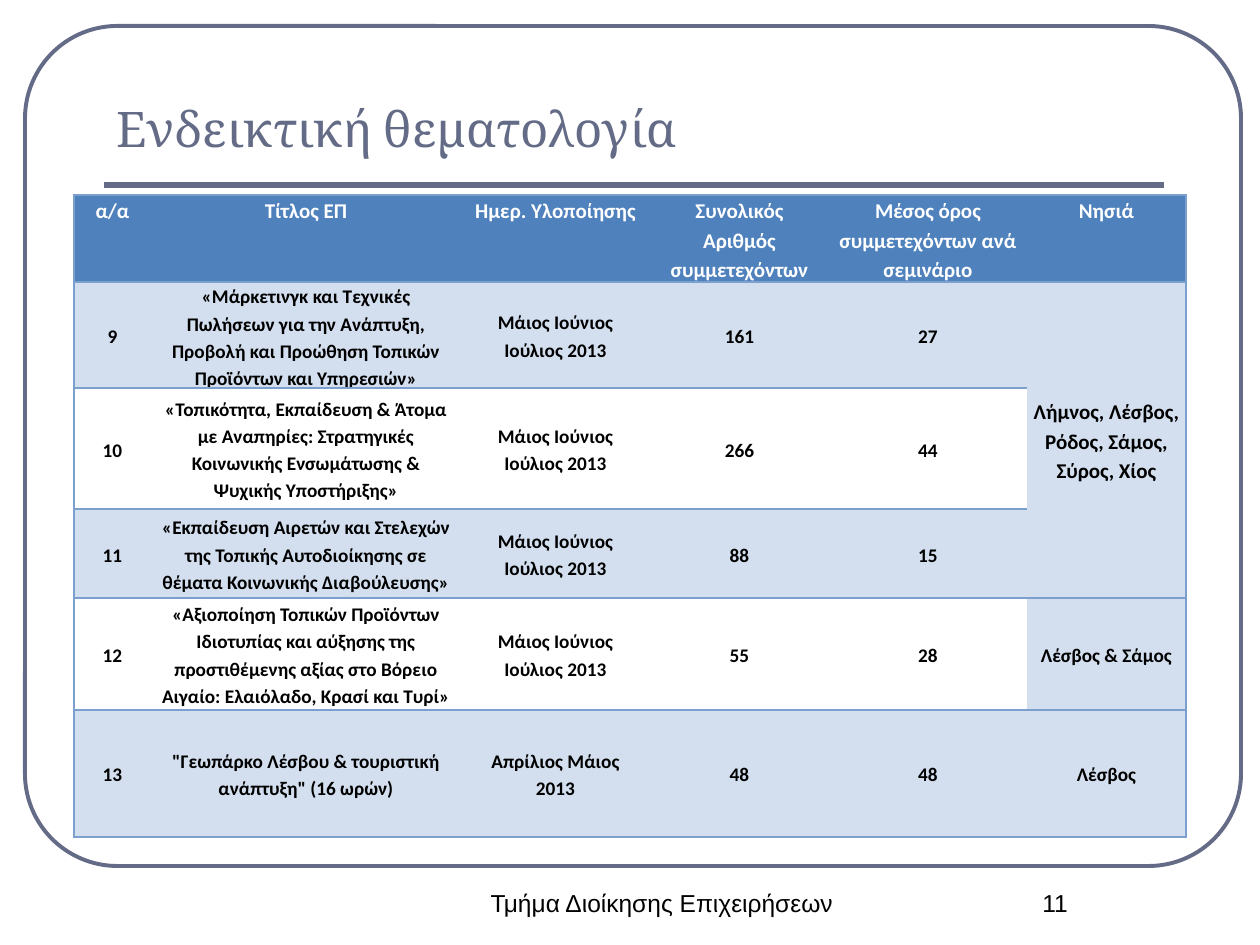
from dataclasses import dataclass

from lxml import etree
from pptx import Presentation
from pptx.dml.color import RGBColor
from pptx.enum.shapes import MSO_CONNECTOR, MSO_SHAPE
from pptx.enum.text import MSO_ANCHOR, PP_ALIGN
from pptx.oxml.ns import qn
from pptx.util import Pt

ROUND_RECT = MSO_SHAPE.ROUNDED_RECTANGLE
STRAIGHT = MSO_CONNECTOR.STRAIGHT
LEFT, CENTER = PP_ALIGN.LEFT, PP_ALIGN.CENTER
TOP, MIDDLE, BOTTOM = MSO_ANCHOR.TOP, MSO_ANCHOR.MIDDLE, MSO_ANCHOR.BOTTOM

TITLE = "Ενδεικτική θεματολογία"
DEPARTMENT = "Τμήμα Διοίκησης Επιχειρήσεων"
PAGE_NUMBER = "11"
SUMMER = "Μάιος Ιούνιος Ιούλιος 2013"
HEADER = [
    "α/α", "Τίτλος ΕΠ", "Ημερ. Υλοποίησης",
    "Συνολικός\nΑριθμός συμμετεχόντων",
    "Μέσος όρος\nσυμμετεχόντων ανά σεμινάριο", "Νησιά",
]
# None continues the cell above.
SEMINARS = [
    ("9", "«Μάρκετινγκ και Τεχνικές Πωλήσεων για την Ανάπτυξη, Προβολή και "
     "Προώθηση Τοπικών Προϊόντων και Υπηρεσιών»", SUMMER, "161", "27",
     "Λήμνος, Λέσβος, Ρόδος, Σάμος, Σύρος, Χίος"),
    ("10", "«Τοπικότητα, Εκπαίδευση & Άτομα με Αναπηρίες: Στρατηγικές "
     "Κοινωνικής Ενσωμάτωσης & Ψυχικής Υποστήριξης»", SUMMER, "266", "44", None),
    ("11", "«Εκπαίδευση Αιρετών και Στελεχών της Τοπικής Αυτοδιοίκησης σε "
     "θέματα Κοινωνικής Διαβούλευσης»", SUMMER, "88", "15", None),
    ("12", "«Αξιοποίηση Τοπικών Προϊόντων Ιδιοτυπίας και αύξησης της "
     "προστιθέμενης αξίας στο Βόρειο Αιγαίο: Ελαιόλαδο, Κρασί και Τυρί»",
     SUMMER, "55", "28", "Λέσβος & Σάμος"),
    ("13", "\"Γεωπάρκο Λέσβου & τουριστική ανάπτυξη\" (16 ωρών)",
     "Απρίλιος Μάιος 2013", "48", "48", "Λέσβος"),
]
COLUMNS = [77, 310, 189, 179, 198, 159]
ROWS = [83, 102, 121, 89, 112, 127]
TABLE_LEFT, TABLE_TOP = 74, 195
ISLANDS = len(HEADER) - 1


@dataclass(frozen=True)
class Theme:
    slate: str = "646B86"
    header: str = "4F81BD"
    band: str = "D3DFEE"
    rule: str = "7BA0CD"
    white: str = "FFFFFF"
    black: str = "000000"
    title_font: str = "Cambria"
    table_font: str = "Calibri"
    footer_font: str = "Arial"
    title_size: int = 28
    footer_size: int = 14
    large_size: int = 12
    body_size: int = 11


THEME = Theme()


def px(length):
    return round(length * 914400 / 126)


def rgb(value):
    return RGBColor.from_string(value)


def style_text(frame, font, size, color, align, bold=False, spacing=None):
    for paragraph in frame.paragraphs:
        paragraph.alignment = align
        paragraph.line_spacing = spacing
        for run in paragraph.runs:
            run.font.name = font
            run.font.size = Pt(size)
            run.font.bold = bold
            run.font.color.rgb = rgb(color)


def add_label(slide, text, box, font, size, color, align, anchor):
    frame = slide.shapes.add_textbox(*map(px, box)).text_frame
    frame.word_wrap = True
    frame.vertical_anchor = anchor
    frame.text = text
    style_text(frame, font, size, color, align)


def add_frame(slide):
    """Draw the rounded page border and the rule under the title."""
    border = slide.shapes.add_shape(ROUND_RECT, *map(px, (25, 26, 1216, 840)))
    border.adjustments[0] = 0.11
    border.shadow.inherit = False
    border.fill.background()
    border.line.color.rgb = rgb(THEME.slate)
    border.line.width = Pt(2.25)

    rule = slide.shapes.add_connector(STRAIGHT, *map(px, (104, 185, 1164, 185)))
    rule.line.color.rgb = rgb(THEME.slate)
    rule.line.width = Pt(3)
    etree.SubElement(rule._element.spPr, qn("a:effectLst"))


def set_borders(cell, sides):
    """Rule the sides named in a string of L, R, T and B; clear the others."""
    properties = cell._tc.get_or_add_tcPr()
    for position, side in enumerate("LRTB"):
        line = etree.Element(qn(f"a:ln{side}"), w=str(Pt(1)))
        if side in sides:
            fill = etree.SubElement(line, qn("a:solidFill"))
            etree.SubElement(fill, qn("a:srgbClr"), val=THEME.rule)
        else:
            etree.SubElement(line, qn("a:noFill"))
        properties.insert(position, line)


def add_seminar_table(slide):
    shape = slide.shapes.add_table(
        len(ROWS), len(COLUMNS), px(TABLE_LEFT), px(TABLE_TOP),
        px(sum(COLUMNS)), px(sum(ROWS)))
    table = shape.table
    table.first_row = table.horz_banding = False
    for column, width in zip(table.columns, COLUMNS):
        column.width = px(width)
    for row, height in zip(table.rows, ROWS):
        row.height = px(height)

    contents = [HEADER, *SEMINARS]
    for r, texts in enumerate(contents):
        for c, text in enumerate(texts):
            cell = table.cell(r, c)
            heading = r == 0
            spans = r + 1 < len(contents) and contents[r + 1][c] is None
            large = heading or spans
            banded = r % 2 == 1 or c == ISLANDS
            fill = THEME.header if heading else THEME.band if banded else THEME.white
            outer = "L" if c == 0 else "R" if c == ISLANDS else ""
            set_borders(cell, outer + ("TB" if text is not None else ""))
            cell.fill.solid()
            cell.fill.fore_color.rgb = rgb(fill)
            cell.margin_left = cell.margin_right = px(6 if large else 9)
            cell.margin_top = cell.margin_bottom = 0
            cell.vertical_anchor = TOP if heading else MIDDLE
            if text is None:
                continue
            cell.text_frame.text = text
            style_text(
                cell.text_frame, THEME.table_font,
                THEME.large_size if large else THEME.body_size,
                THEME.white if heading else THEME.black,
                CENTER, bold=True, spacing=1.15)

    for r, texts in enumerate(contents):
        end = r
        while end + 1 < len(contents) and contents[end + 1][ISLANDS] is None:
            end += 1
        if end > r and texts[ISLANDS] is not None:
            table.cell(r, ISLANDS).merge(table.cell(end, ISLANDS))


def main():
    deck = Presentation()
    deck.slide_width, deck.slide_height = px(1260), px(945)
    slide = deck.slides.add_slide(deck.slide_layouts[6])
    add_frame(slide)
    add_label(slide, TITLE, (104, 45, 1061, 119), THEME.title_font,
              THEME.title_size, THEME.slate, LEFT, BOTTOM)
    add_seminar_table(slide)
    for text, box in ((DEPARTMENT, (462, 882, 400, 63)),
                      (PAGE_NUMBER, (945, 882, 220, 63))):
        add_label(slide, text, box, THEME.footer_font, THEME.footer_size,
                  THEME.black, CENTER, TOP)
    deck.save("out.pptx")


if __name__ == "__main__":
    main()
